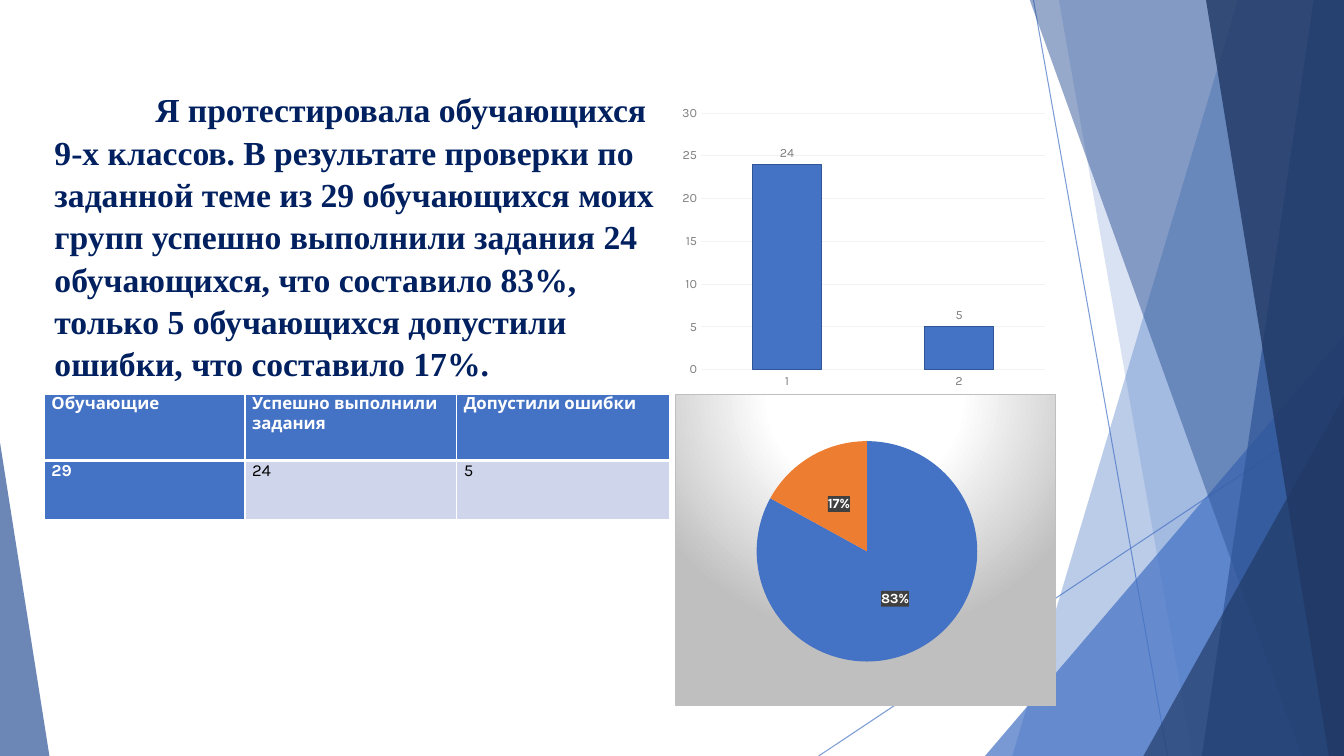
from dataclasses import dataclass
from typing import Any

from lxml.etree import SubElement
from pptx import Presentation
from pptx.chart.data import CategoryChartData
from pptx.dml.color import RGBColor
from pptx.enum.chart import XL_CHART_TYPE as ChartType, XL_LABEL_POSITION as LabelPosition
from pptx.enum.chart import XL_TICK_MARK as TickMark
from pptx.enum.shapes import MSO_CONNECTOR as Connector, MSO_SHAPE as Preset
from pptx.enum.text import MSO_ANCHOR as Anchor, MSO_AUTO_SIZE as AutoSize, PP_ALIGN as Align
from pptx.oxml import parse_xml
from pptx.oxml.ns import nsdecls, qn
from pptx.util import Emu, Pt

PX = 9144
WIDTH, HEIGHT = 1333, 750
BLUE, DEEP, NAVY, ORANGE = "4472C4", "2F5597", "203864", "ED7D31"
WHITE, GREY, PALE = "FFFFFF", "808080", "CFD5EA"
BODY_FONT = "Karla"


@dataclass
class Ray:
    start: tuple[int, int]
    end: tuple[int, int]


@dataclass
class Band:
    top_left: int
    bottom_left: int
    color: str
    opacity: int


@dataclass
class Triangle:
    box: tuple[int, int, int, int]
    apex: int
    color: str
    opacity: int


RAYS = [Ray((1025, 0), (1158, 750)), Ray((1333, 403), (812, 750))]
DECOR = [
    Band(1228, 1004, BLUE, 36),
    Band(1050, 1183, BLUE, 20),
    Triangle((977, 333, 356, 417), 1, BLUE, 72),
    Band(1021, 1291, DEEP, 50),
    Band(1303, 1192, DEEP, 70),
    Band(1196, 1318, NAVY, 80),
    Triangle((1134, 393, 199, 357), 1, NAVY, 66),
    Triangle((0, 439, 49, 311), 0, DEEP, 70),
]
STORY = (
    "Я протестировала обучающихся 9-х классов. В результате проверки по заданной теме "
    "из 29 обучающихся моих групп успешно выполнили задания 24 обучающихся, что составило 83%, "
    "только 5 обучающихся допустили ошибки, что составило 17%."
)
TABLE_ROWS = [["Обучающие", "Успешно выполнили задания", "Допустили ошибки"], ["29", "24", "5"]]
COLUMN_WIDTHS, ROW_HEIGHTS = [199, 210, 211], [66, 59]


def px(*lengths: int) -> list[Emu]:
    return [Emu(length * PX) for length in lengths]


def rgb(color: str) -> RGBColor:
    return RGBColor.from_string(color)


def set_opacity(element: Any, opacity: int) -> None:
    color = next(element.iter(qn("a:srgbClr")))
    SubElement(color, qn("a:alpha")).set("val", str(opacity * 1000))


def paint(shape: Any, color: str, opacity: int) -> None:
    shape.shadow.inherit = False
    shape.fill.solid()
    shape.fill.fore_color.rgb = rgb(color)
    set_opacity(shape.fill._xPr, opacity)
    shape.line.fill.background()


def set_font(font: Any, size: int, color: str, bold: bool = False, name: str = BODY_FONT) -> None:
    font.name, font.size, font.bold = name, Pt(size), bold
    font.color.rgb = rgb(color)


def draw_ray(slide: Any, ray: Ray) -> None:
    line = slide.shapes.add_connector(Connector.STRAIGHT, *px(*ray.start, *ray.end))
    line.line.width = Pt(0.75)
    line.line.color.rgb = rgb(BLUE)
    properties = line._element.spPr
    set_opacity(properties, 70)
    SubElement(properties, qn("a:effectLst"))


def draw_band(slide: Any, band: Band) -> None:
    builder = slide.shapes.build_freeform(band.top_left, -1, scale=PX)
    builder.add_line_segments([(WIDTH, -1), (WIDTH, HEIGHT), (band.bottom_left, HEIGHT)])
    paint(builder.convert_to_shape(), band.color, band.opacity)


def draw_triangle(slide: Any, triangle: Triangle) -> None:
    shape = slide.shapes.add_shape(Preset.ISOSCELES_TRIANGLE, *px(*triangle.box))
    shape.adjustments[0] = triangle.apex
    paint(shape, triangle.color, triangle.opacity)


def draw_title(slide: Any) -> None:
    title = slide.shapes.title
    title.left, title.top, title.width, title.height = px(44, 87, 637, 288)
    frame = title.text_frame
    frame.word_wrap, frame.auto_size = True, AutoSize.NONE
    frame.vertical_anchor = Anchor.MIDDLE
    frame.margin_left, frame.margin_top, frame.margin_right, frame.margin_bottom = px(10, 5, 10, 0)
    paragraph = frame.paragraphs[0]
    paragraph.alignment, paragraph.line_spacing = Align.LEFT, 1.05
    properties = paragraph._p.get_or_add_pPr()
    properties.set("marL", "0")
    properties.set("indent", str(100 * PX))
    run = paragraph.add_run()
    run.text = STORY
    set_font(run.font, 24, "002060", True, "Times New Roman")


def set_borders(cell: Any, top: int, bottom: int) -> None:
    properties = cell._tc.get_or_add_tcPr()
    sides = [("lnL", 1), ("lnR", 1), ("lnT", top), ("lnB", bottom)]
    for index, (side, width) in enumerate(sides):
        properties.insert(index, parse_xml(
            f'<a:{side} {nsdecls("a")} w="{Pt(width)}"><a:solidFill>'
            f'<a:srgbClr val="{WHITE}"/></a:solidFill></a:{side}>'))


def draw_table(slide: Any) -> None:
    box = px(44, 391, sum(COLUMN_WIDTHS), sum(ROW_HEIGHTS))
    table = slide.shapes.add_table(len(ROW_HEIGHTS), len(COLUMN_WIDTHS), *box).table
    for column, width in zip(table.columns, px(*COLUMN_WIDTHS)):
        column.width = width
    for row, height in zip(table.rows, px(*ROW_HEIGHTS)):
        row.height = height
    for row_index, texts in enumerate(TABLE_ROWS):
        for column_index, text in enumerate(texts):
            cell = table.cell(row_index, column_index)
            strong = row_index == 0 or column_index == 0
            cell.margin_left, cell.margin_top, cell.margin_right, cell.margin_bottom = px(7, 0, 7, 0)
            cell.fill.solid()
            cell.fill.fore_color.rgb = rgb(BLUE if strong else PALE)
            set_borders(cell, *((1, 3) if row_index == 0 else (3, 1)))
            run = cell.text_frame.paragraphs[0].add_run()
            run.text = text
            set_font(run.font, 12, WHITE if strong else "000000", strong)


def add_chart(slide: Any, kind: Any, box: list[Emu], values: list[int]) -> Any:
    data = CategoryChartData()
    data.categories = ["1", "2"]
    data.add_series("Series 1", values)
    chart = slide.shapes.add_chart(kind, *box, data).chart
    chart.has_title = chart.has_legend = False
    set_font(chart.font, 10, "000000")
    plot = chart.plots[0]
    plot.vary_by_categories = kind == ChartType.PIE
    plot.has_data_labels = True
    return chart


def draw_columns(slide: Any) -> None:
    chart = add_chart(slide, ChartType.COLUMN_CLUSTERED, px(669, 99, 375, 292), [24, 5])
    plot = chart.plots[0]
    plot.gap_width = 150
    series = plot.series[0]
    series.format.fill.solid()
    series.format.fill.fore_color.rgb = rgb(BLUE)
    series.format.line.color.rgb = rgb(DEEP)
    series.format.line.width = Pt(0.75)
    plot.data_labels.show_value = True
    plot.data_labels.position = LabelPosition.OUTSIDE_END
    set_font(plot.data_labels.font, 9, GREY)
    for axis in (chart.category_axis, chart.value_axis):
        axis.major_tick_mark = axis.minor_tick_mark = TickMark.NONE
        axis.format.line.fill.background()
        set_font(axis.tick_labels.font, 9, GREY)
    scale = chart.value_axis
    scale.minimum_scale, scale.maximum_scale, scale.major_unit = 0, 30, 5
    scale.major_gridlines.format.line.color.rgb = rgb("F2F2F2")
    scale.major_gridlines.format.line.width = Pt(0.75)


def draw_pie(slide: Any) -> None:
    chart = add_chart(slide, ChartType.PIE, px(669, 391, 378, 309), [83, 17])
    plot = chart.plots[0]
    for index, color in enumerate((BLUE, ORANGE)):
        fill = plot.series[0].points[index].format.fill
        fill.solid()
        fill.fore_color.rgb = rgb(color)
    labels = plot.data_labels
    labels.show_value, labels.show_percentage = False, True
    labels.number_format, labels.number_format_is_linked = "0%", False
    labels.position = LabelPosition.CENTER
    set_font(labels.font, 10, WHITE, True)
    labels._element.find(qn("c:txPr")).addprevious(parse_xml(
        f'<c:spPr {nsdecls("c", "a")}><a:solidFill><a:srgbClr val="404040"/></a:solidFill></c:spPr>'))
    stops = "".join(f'<a:gs pos="{place * 1000}"><a:srgbClr val="{color}"/></a:gs>'
                    for place, color in ((0, WHITE), (39, WHITE), (100, "BFBFBF")))
    area = chart.element.find(qn("c:chart"))
    area.addnext(parse_xml(
        f'<c:spPr {nsdecls("c", "a")}><a:gradFill><a:gsLst>{stops}</a:gsLst><a:path path="circle">'
        '<a:fillToRect l="50000" t="-80000" r="50000" b="180000"/></a:path></a:gradFill>'
        f'<a:ln w="{Pt(0.75)}"><a:solidFill><a:srgbClr val="BFBFBF"/></a:solidFill></a:ln></c:spPr>'))
    plot_area = area.find(qn("c:plotArea"))
    for layout in plot_area.findall(qn("c:layout")):
        plot_area.remove(layout)
    settings = [("layoutTarget", "inner"), ("xMode", "edge"), ("yMode", "edge"),
                ("x", 0.01), ("y", 0.15), ("w", 0.99), ("h", 0.71)]
    entries = "".join(f'<c:{name} val="{value}"/>' for name, value in settings)
    plot_area.insert(0, parse_xml(
        f'<c:layout {nsdecls("c")}><c:manualLayout>{entries}</c:manualLayout></c:layout>'))


def main() -> None:
    presentation = Presentation()
    presentation.slide_width, presentation.slide_height = px(WIDTH, HEIGHT)
    slide = presentation.slides.add_slide(presentation.slide_layouts[5])
    for ray in RAYS:
        draw_ray(slide, ray)
    for item in DECOR:
        draw_band(slide, item) if isinstance(item, Band) else draw_triangle(slide, item)
    draw_title(slide)
    draw_table(slide)
    draw_columns(slide)
    draw_pie(slide)
    presentation.save("out.pptx")


if __name__ == "__main__":
    main()
